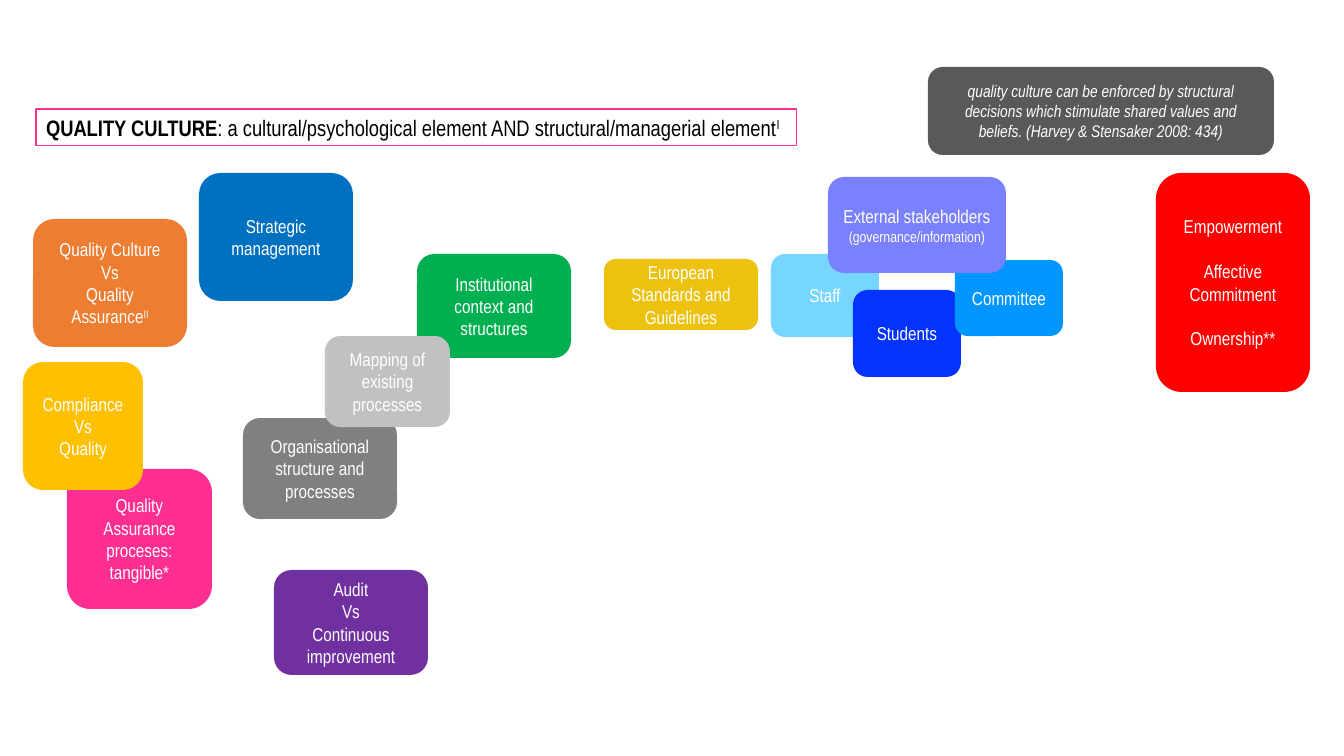
from pptx import Presentation
from pptx import util as u
from pptx.dml.color import RGBColor
from pptx.enum import shapes, text

PX = 914400 / 100.8
THEME = {
    "font": "Arial Narrow",
    "title": 16, "body": 13.3, "quote": 12, "small": 10.7, "gap": 16,
    "black": "000000", "white": "FFFFFF", "pink": "FF2F92", "gold": "EDC20E",
    "green": "00B050", "grey": "808080", "silver": "C1C1C1", "orange": "ED7D31",
    "blue": "0070C0", "sky": "76D6FF", "royal": "0432FF", "azure": "0096FF",
    "lilac": "7A81FF", "slate": "595959", "red": "FF0000", "amber": "FFC000",
    "purple": "7030A0",
}


def color(name):
    return RGBColor.from_string(THEME[name])


def write(para, words, size, ink, align):
    """Fill a paragraph; whatever follows a ^ is raised."""
    para.alignment = align
    para.font.name = THEME["font"]
    para.font.size = u.Pt(THEME[size])
    para.font.color.rgb = color(ink)
    main, _, note = words.partition("^")
    para.add_run().text = main
    if note:
        run = para.add_run()
        run.text = note
        run._r.get_or_add_rPr().set("baseline", "30000")


deck = Presentation()
deck.slide_width, deck.slide_height = round(1344 * PX), round(756 * PX)
slide = deck.slides.add_slide(deck.slide_layouts[5])

# Heading
title = slide.shapes.title
title.left, title.top, title.width, title.height = [
    round(n * PX) for n in (36, 109, 761, 37)]
title.line.color.rgb = color("pink")
title.line.width = u.Pt(0.75)
frame = title.text_frame
frame.auto_size = text.MSO_AUTO_SIZE.NONE
frame.vertical_anchor = text.MSO_ANCHOR.MIDDLE
frame.word_wrap = True
head = frame.paragraphs[0]
lead = head.add_run()
lead.text = "QUALITY CULTURE"
lead.font.bold = True
write(head, ": a cultural/psychological element AND structural/managerial element^I",
      "title", "black", text.PP_ALIGN.LEFT)

# Cards, back to front: left, top, width, height, fill, paragraphs
CARDS = [
    (604, 259, 154, 71, "gold", ["European Standards and Guidelines"]),
    (417, 254, 154, 104, "green", ["Institutional context and structures"]),
    (243, 418, 154, 101, "grey", ["Organisational structure and processes"]),
    (325, 336, 125, 91, "silver", ["Mapping of existing processes"]),
    (33, 219, 154, 128, "orange",
     ["Quality Culture", "Vs", "Quality Assurance^II"]),
    (199, 173, 154, 128, "blue", ["Strategic management"]),
    (771, 254, 108, 83, "sky", ["Staff"]),
    (853, 290, 108, 87, "royal", ["Students"]),
    (955, 260, 108, 76, "azure", ["Committee"]),
    (828, 177, 178, 96, "lilac",
     ["External stakeholders", "(governance/information)"]),
    (67, 469, 145, 140, "pink", ["Quality Assurance proceses: tangible*"]),
    (928, 67, 346, 88, "slate",
     ["quality culture can be enforced by structural decisions which stimulate "
      "shared values and beliefs. (Harvey & Stensaker 2008: 434)"]),
    (1156, 173, 154, 219, "red",
     ["Empowerment", "Affective Commitment", "Ownership**"]),
    (23, 362, 120, 128, "amber", ["Compliance", "Vs", "Quality"]),
    (274, 570, 154, 105, "purple", ["Audit", "Vs", "Continuous improvement"]),
]
for *box, fill, lines in CARDS:
    card = slide.shapes.add_shape(
        shapes.MSO_SHAPE.ROUNDED_RECTANGLE, *[round(n * PX) for n in box])
    card.shadow.inherit = False
    card.fill.solid()
    card.fill.fore_color.rgb = color(fill)
    card.line.fill.background()
    frame = card.text_frame
    frame.word_wrap = True
    frame.vertical_anchor = text.MSO_ANCHOR.MIDDLE
    for i, words in enumerate(lines):
        para = frame.add_paragraph() if i else frame.paragraphs[0]
        size = "quote" if fill == "slate" else "body"
        if words.startswith("("):
            size = "small"
        write(para, words, size, "white", text.PP_ALIGN.CENTER)
        if fill == "slate":
            para.font.italic = True
        if fill == "red" and i:
            para.space_before = u.Pt(THEME["gap"])

deck.save("out.pptx")
